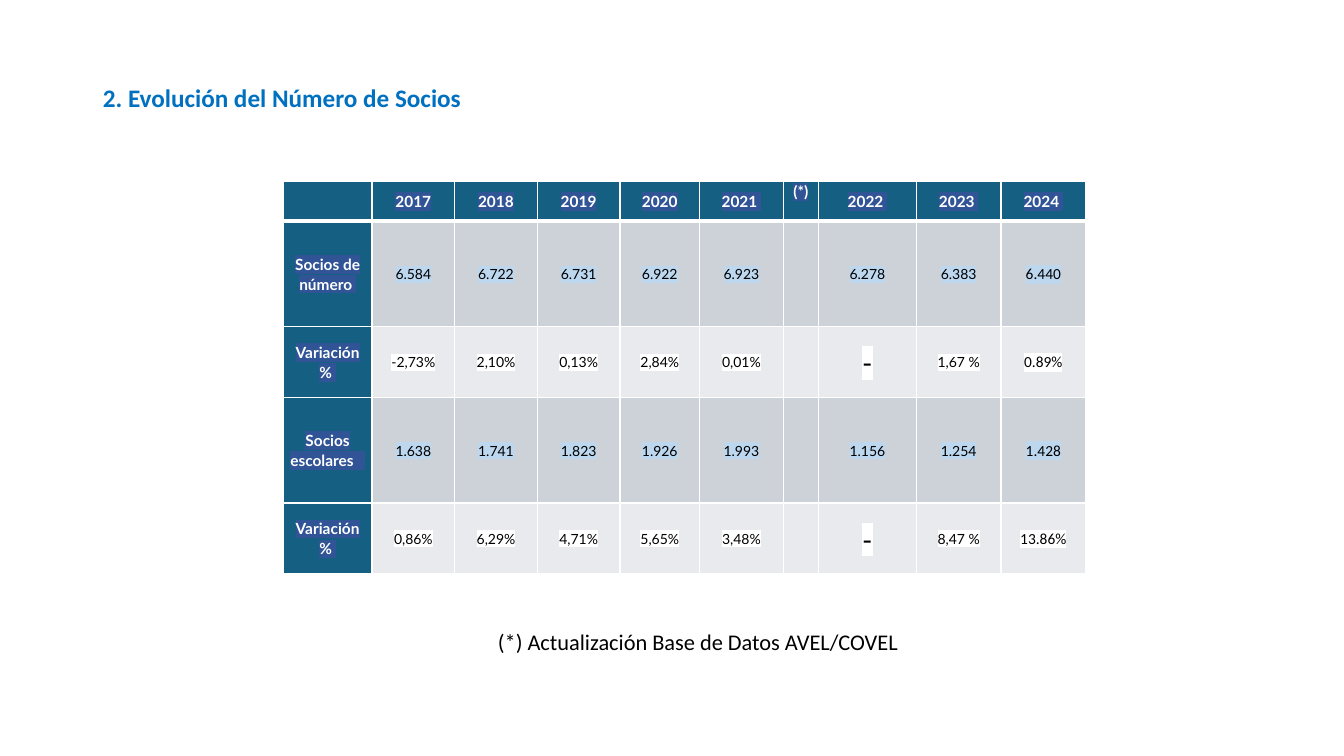
from lxml import etree
from pptx import Presentation
from pptx import util as u
from pptx.dml.color import RGBColor
from pptx.enum import text as t
from pptx.oxml import ns

WHITE = RGBColor(0xFF, 0xFF, 0xFF)
BLACK = RGBColor(0, 0, 0)
BLUE = RGBColor(0x00, 0x70, 0xC0)
TEAL = RGBColor(0x15, 0x60, 0x82)
INDIGO = RGBColor(0x30, 0x54, 0x96)
SKY = RGBColor(0xBD, 0xD7, 0xEE)
GREY = RGBColor(0xCC, 0xD2, 0xD8)
PALE = RGBColor(0xE8, 0xEA, 0xED)

COLS = [0.88, 0.82, 0.82, 0.82, 0.79, 0.83, 0.35, 0.97, 0.84, 0.84]
ROWS = [0.39, 1.05, 0.7, 1.05, 0.7]
DATA = [
    ["", "2017", "2018", "2019", "2020", "2021 ", "(*)", "2022 ", "2023 ", "2024 "],
    ["Socios de número ", "6.584", "6.722", "6.731", "6.922", "6.923", "",
     "6.278", "6.383", "6.440"],
    ["Variación % ", "-2,73%", "2,10%", "0,13%", "2,84%", "0,01%", "",
     "-", "1,67 %", "0.89%"],
    ["Socios escolares   ", "1.638", "1.741", "1.823", "1.926", "1.993", "",
     "1.156", "1.254", "1.428"],
    ["Variación % ", "0,86%", "6,29%", "4,71%", "5,65%", "3,48%", "",
     "-", "8,47 %", "13.86%"],
]


def style(font, size, color, name="Calibri", bold=False):
    """Set the look of a font."""
    font.size, font.name, font.bold = u.Pt(size), name, bold
    font.color.rgb = color


def mark(run, color):
    """Put a highlight behind a run."""
    tint = etree.Element(ns.qn("a:highlight"))
    etree.SubElement(tint, ns.qn("a:srgbClr"), val=str(color))
    run.font.fill
    run.font._element.find(ns.qn("a:solidFill")).addnext(tint)


def edge(cell, row):
    """Draw the white borders of a cell, thick below the header."""
    thick = {(0, "B"), (1, "T")}
    props = cell._tc.get_or_add_tcPr()
    for spot, side in enumerate("LRTB"):
        width = u.Pt(3 if (row, side) in thick else 1)
        line = etree.Element(ns.qn("a:ln" + side), w=str(width))
        fill = etree.SubElement(line, ns.qn("a:solidFill"))
        etree.SubElement(fill, ns.qn("a:srgbClr"), val=str(WHITE))
        props.insert(spot, line)


def fill_cell(cell, words, row, col):
    """Write and format one table cell."""
    head = row == 0 or col == 0
    odd = row % 2 == 1
    last = col == len(COLS) - 1
    cell.fill.solid()
    cell.fill.fore_color.rgb = TEAL if head else GREY if odd else PALE
    cell.margin_left = cell.margin_right = u.Inches(0.05)
    cell.margin_top = cell.margin_bottom = 0
    top = words in ("", "(*)")
    cell.vertical_anchor = t.MSO_ANCHOR.TOP if top else t.MSO_ANCHOR.MIDDLE
    para = cell.text_frame.paragraphs[0]
    para.text = words
    para.alignment = t.PP_ALIGN.CENTER
    para.line_spacing = 1.07
    para.space_after = u.Pt(8)
    size = 20 if words == "-" else 11 if head or last else 10
    name = "Calibri" if last and not head else "Lato"
    for run in para.runs:
        style(run.font, size, WHITE if head else BLACK, name, head)
        mark(run, INDIGO if head else SKY if odd else WHITE)
    edge(cell, row)


def add_grid(slide):
    """Add the table of members by year."""
    frame = slide.shapes.add_table(
        len(ROWS), len(COLS), u.Inches(2.81), u.Inches(1.8),
        u.Inches(sum(COLS)), u.Inches(sum(ROWS)))
    grid = frame.table
    for col, width in zip(grid.columns, COLS):
        col.width = u.Inches(width)
    for row, height in zip(grid.rows, ROWS):
        row.height = u.Inches(height)
    for row, line in enumerate(DATA):
        for col, words in enumerate(line):
            fill_cell(grid.cell(row, col), words, row, col)


def set_title(slide, words):
    """Fill and place the title."""
    title = slide.shapes.title
    title.left, title.top = u.Inches(0.92), u.Inches(0.77)
    title.width, title.height = u.Inches(3.78), u.Inches(0.71)
    frame = title.text_frame
    frame.text = words
    frame.word_wrap = False
    frame.auto_size = t.MSO_AUTO_SIZE.NONE
    frame.vertical_anchor = t.MSO_ANCHOR.TOP
    para = frame.paragraphs[0]
    para.alignment = t.PP_ALIGN.LEFT
    style(para.runs[0].font, 18, BLUE, bold=True)


def add_note(slide, words):
    """Add the note below the table."""
    box = slide.shapes.add_textbox(
        u.Inches(4.84), u.Inches(6.18), u.Inches(6.67), u.Inches(0.37))
    frame = box.text_frame
    frame.word_wrap = True
    frame.text = words
    style(frame.paragraphs[0].runs[0].font, 16, BLACK)


def main():
    """Build and save the slide."""
    deck = Presentation()
    deck.slide_width, deck.slide_height = u.Inches(13.33), u.Inches(7.5)
    slide = deck.slides.add_slide(deck.slide_layouts[5])
    set_title(slide, "2. Evolución del Número de Socios")
    add_grid(slide)
    add_note(slide, "(*) Actualización Base de Datos AVEL/COVEL")
    deck.save("out.pptx")


if __name__ == "__main__":
    main()
